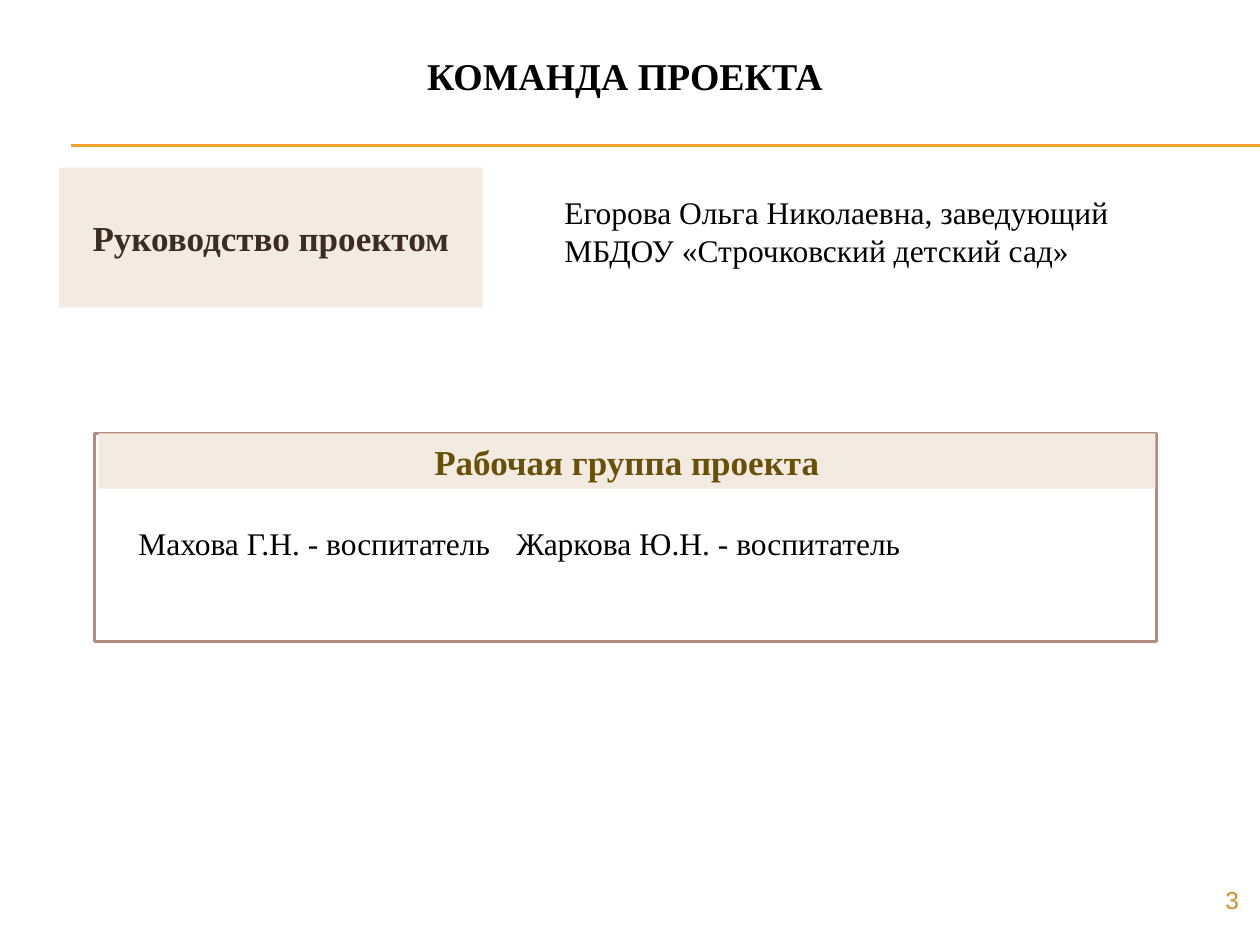
from lxml.etree import SubElement as Sub
from pptx import Presentation
from pptx.dml.color import RGBColor as RGB
from pptx.enum.shapes import MSO_CONNECTOR as LINK, MSO_SHAPE as FORM
from pptx.enum.text import MSO_ANCHOR as ANCHOR, PP_ALIGN as ALIGN
from pptx.oxml.ns import qn
from pptx.util import Pt

HUES = {
    "rule": "F0A22E", "edge": "B58B80", "sand": "F3EAE2", "white": "FFFFFF",
    "black": "000000", "brown": "3B2C24", "olive": "695008", "gold": "D48F29",
}
SERIF = "Times New Roman"


def hue(name):
    return RGB.from_string(HUES[name])


def add_rule(slide, left, top, right):
    line = slide.shapes.add_connector(LINK.STRAIGHT, Pt(left), Pt(top), Pt(right), Pt(top))
    line.line.color.rgb = hue("rule")
    line.line.width = Pt(0.75)
    Sub(line._element.spPr, qn("a:effectLst"))


def add_panel(slide, area, fill, edge=None):
    panel = slide.shapes.add_shape(FORM.RECTANGLE, *map(Pt, area))
    panel.shadow.inherit = False
    panel.fill.solid()
    panel.fill.fore_color.rgb = hue(fill)
    if edge:
        panel.line.color.rgb = hue(edge)
        panel.line.width = Pt(2)
    else:
        panel.line.fill.background()
    return panel


def add_box(slide, area):
    return slide.shapes.add_textbox(*map(Pt, area))


def write(shape, text, size, color, bold=False, font=SERIF,
          align=ALIGN.LEFT, anchor=ANCHOR.MIDDLE):
    frame = shape.text_frame
    frame.word_wrap = True
    frame.vertical_anchor = anchor
    para = frame.paragraphs[0]
    para.alignment = align
    run = para.add_run()
    run.text = text
    run.font.name = font
    run.font.size = Pt(size)
    run.font.bold = bold
    run.font.color.rgb = hue(color)


def set_tabs(shape, indent, stop):
    props = shape.text_frame.paragraphs[0]._p.get_or_add_pPr()
    props.set("marL", str(Pt(indent)))
    props.set("indent", "0")
    tabs = Sub(props, qn("a:tabLst"))
    Sub(tabs, qn("a:tab"), pos=str(Pt(stop)), algn="l")


def main():
    deck = Presentation()
    deck.slide_width, deck.slide_height = Pt(720), Pt(540)
    slide = deck.slides.add_slide(deck.slide_layouts[6])

    # Double rule under the title
    for top in (82.8, 83.4):
        add_rule(slide, 40.5, top, 720)

    # Working group: frame with two members, then its heading
    group = add_panel(slide, (54, 247.7, 607, 118.8), "white", "edge")
    group.text_frame.margin_top = Pt(52)
    set_tabs(group, 18, 349)
    write(group, "Махова Г.Н. - воспитатель\tЖаркова Ю.Н. - воспитатель",
          18, "black", anchor=ANCHOR.TOP)
    head = add_panel(slide, (56.2, 247.7, 604, 31.5), "sand")
    write(head, "Рабочая группа проекта", 20, "olive", True, align=ALIGN.CENTER)

    # Project lead: label and name
    label = add_panel(slide, (33.8, 95.8, 242, 80), "sand")
    write(label, "Руководство проектом", 20, "brown", True, align=ALIGN.CENTER)
    lead = add_box(slide, (315.4, 106.8, 326, 51))
    write(lead, "Егорова Ольга Николаевна, заведующий МБДОУ «Строчковский детский сад»",
          18, "black", anchor=ANCHOR.TOP)

    # Title and page number
    title = add_box(slide, (19.4, 26, 681, 34.6))
    write(title, "КОМАНДА ПРОЕКТА ", 21.6, "black", True, align=ALIGN.CENTER)
    page = add_box(slide, (547, 502, 168, 28.8))
    write(page, "3", 14, "gold", font="Arial", align=ALIGN.RIGHT, anchor=ANCHOR.TOP)

    deck.save("out.pptx")


if __name__ == "__main__":
    main()
